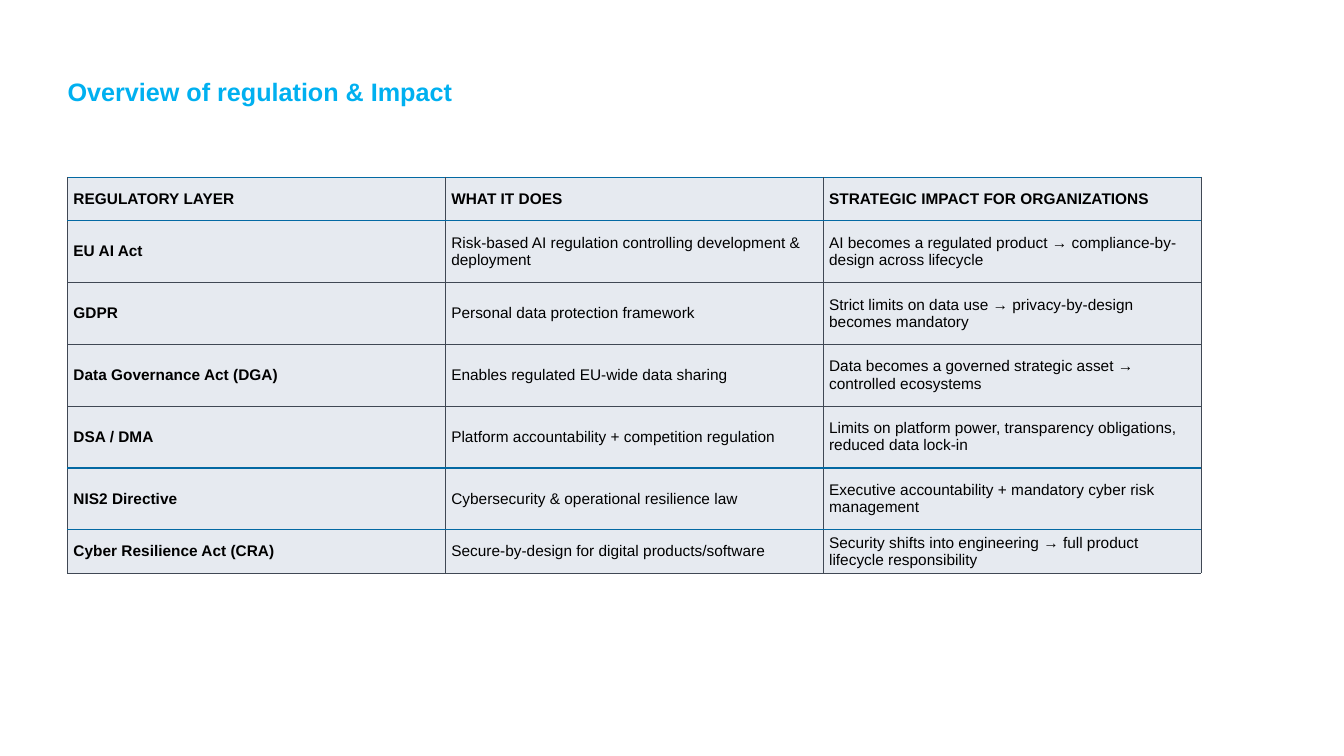
"""Build a slide with a table of EU regulations and their impact."""
from dataclasses import dataclass

from lxml.etree import SubElement
from pptx import Presentation
from pptx.dml.color import RGBColor
from pptx.enum.text import MSO_ANCHOR, PP_ALIGN
from pptx.oxml.ns import qn
from pptx.util import Pt


@dataclass(frozen=True)
class Theme:
    font: str = "Arial"
    title_color: str = "00B0F0"
    text_color: str = "000000"
    cell_fill: str = "E6EAF0"
    accent_line: str = "0369A3"
    grid_line: str = "404854"
    title_size: float = 18
    table_size: float = 11


def write_text(frame, text, size, color, bold=False, spacing=1.0, margins=(0, 0)):
    frame.word_wrap = True
    frame.vertical_anchor = MSO_ANCHOR.MIDDLE
    frame.margin_left = frame.margin_right = Pt(margins[0])
    frame.margin_top = frame.margin_bottom = Pt(margins[1])
    paragraph = frame.paragraphs[0]
    paragraph.alignment = PP_ALIGN.LEFT
    paragraph.line_spacing = spacing
    run = paragraph.add_run()
    run.text = text
    run.font.name = theme.font
    run.font.size = Pt(size)
    run.font.bold = bold
    run.font.color.rgb = RGBColor.from_string(color)


def add_border(cell, side, color, width):
    properties = cell._tc.get_or_add_tcPr()
    line = SubElement(properties, qn(f"a:ln{side}"), w=str(Pt(width)))
    fill = SubElement(line, qn("a:solidFill"))
    SubElement(fill, qn("a:srgbClr"), val=color)


theme = Theme()
presentation = Presentation()
presentation.slide_width = Pt(960.48)
presentation.slide_height = Pt(540)
slide = presentation.slides.add_slide(presentation.slide_layouts[5])

title = slide.shapes.title
title.left, title.top, title.width, title.height = Pt(48.24), Pt(21.6), Pt(864), Pt(90)
write_text(title.text_frame, "Overview of regulation & Impact", size=theme.title_size,
           color=theme.title_color, bold=True, spacing=0.9)

regulations = [
    ("REGULATORY LAYER", "WHAT IT DOES", "STRATEGIC IMPACT FOR ORGANIZATIONS"),
    ("EU AI Act", "Risk-based AI regulation controlling development & deployment",
     "AI becomes a regulated product → compliance-by-design across lifecycle"),
    ("GDPR", "Personal data protection framework",
     "Strict limits on data use → privacy-by-design becomes mandatory"),
    ("Data Governance Act (DGA)", "Enables regulated EU-wide data sharing",
     "Data becomes a governed strategic asset → controlled ecosystems"),
    ("DSA / DMA", "Platform accountability + competition regulation",
     "Limits on platform power, transparency obligations, reduced data lock-in"),
    ("NIS2 Directive", "Cybersecurity & operational resilience law",
     "Executive accountability + mandatory cyber risk management"),
    ("Cyber Resilience Act (CRA)", "Secure-by-design for digital products/software",
     "Security shifts into engineering → full product lifecycle responsibility"),
]
row_heights = [30.8] + [44.2] * 5 + [30.8]
column_width = 270
grid_border = (theme.grid_line, 0.5)
accent_border = (theme.accent_line, 1)
row_borders = [grid_border] * (len(regulations) + 1)
for edge in (0, 1, 5, 6):
    row_borders[edge] = accent_border

table_shape = slide.shapes.add_table(len(regulations), 3, Pt(48.24), Pt(126.7),
                                     Pt(3 * column_width), Pt(sum(row_heights)))
table = table_shape.table
table.first_row = table.horz_banding = False
for column in table.columns:
    column.width = Pt(column_width)

for row_index, texts in enumerate(regulations):
    table.rows[row_index].height = Pt(row_heights[row_index])
    for column_index, text in enumerate(texts):
        cell = table.cell(row_index, column_index)
        write_text(cell.text_frame, text, size=theme.table_size, color=theme.text_color,
                   bold=row_index == 0 or column_index == 0)
        cell.vertical_anchor = MSO_ANCHOR.MIDDLE
        cell.margin_left = cell.margin_right = Pt(4.3)
        cell.margin_top = cell.margin_bottom = Pt(2.2)
        add_border(cell, "L", *grid_border)
        add_border(cell, "R", *grid_border)
        add_border(cell, "T", *row_borders[row_index])
        add_border(cell, "B", *row_borders[row_index + 1])
        cell.fill.solid()
        cell.fill.fore_color.rgb = RGBColor.from_string(theme.cell_fill)

presentation.save("out.pptx")
